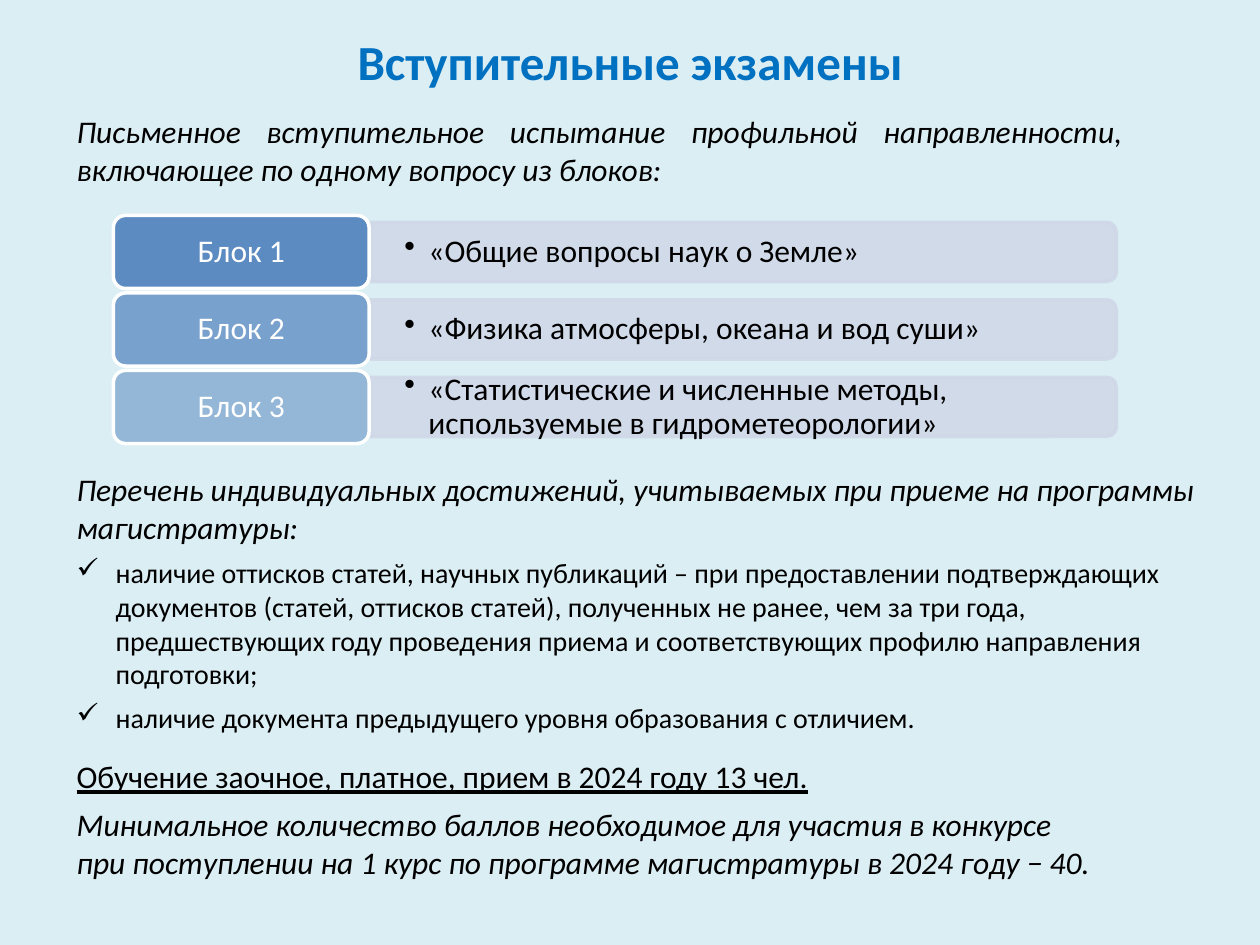
import lxml.etree
import pptx
import pptx.dml.color
import pptx.enum.shapes
import pptx.enum.text
import pptx.oxml.ns
import pptx.util

Inches, Pt = pptx.util.Inches, pptx.util.Pt
Align = pptx.enum.text.PP_ALIGN
Anchor = pptx.enum.text.MSO_ANCHOR
Preset = pptx.enum.shapes.MSO_SHAPE
qn = pptx.oxml.ns.qn

COLORS = {"background": "DBEEF4", "title": "0070C0", "text": "000000",
          "white": "FFFFFF", "bar": "D0D8E8", "block": "4F81BD"}
FONT = "Calibri"

TITLE = "Вступительные экзамены"
BLOCKS = [  # label, topic, opacity of the label in percent
    ("Блок 1", "«Общие вопросы наук о Земле»", 90),
    ("Блок 2", "«Физика атмосферы, океана и вод суши»", 70),
    ("Блок 3", "«Статистические и численные методы, используемые в гидрометеорологии»", 50),
]
ITALIC = {"size": Pt(18), "italic": True}
CHECK = {"bullet": "✓", "indent": 0.31}
EXAM = [
    ("Письменное вступительное испытание профильной направленности, "
     "включающее по одному вопросу из блоков:", ITALIC, {"alignment": Align.JUSTIFY}, {}),
]
ACHIEVEMENTS = [
    ("Перечень индивидуальных достижений, учитываемых при приеме на программы магистратуры:",
     ITALIC, {"space_after": Pt(6)}, {}),
    ("наличие оттисков статей, научных публикаций – при предоставлении подтверждающих "
     "документов (статей, оттисков статей), полученных не ранее, чем за три года, "
     "предшествующих году проведения приема и соответствующих профилю направления подготовки;",
     {"size": Pt(16)}, {"space_after": Pt(6)}, CHECK),
    ("наличие документа предыдущего уровня образования с отличием.",
     {"size": Pt(16)}, {}, CHECK),
]
ADMISSION = [
    ("Обучение заочное, платное, прием в 2024 году 13 чел.",
     {"size": Pt(18), "underline": True}, {"space_after": Pt(6)}, {}),
    ("Минимальное количество баллов необходимое для участия в конкурсе", ITALIC, {}, {}),
    ("при поступлении на 1 курс по программе магистратуры в 2024 году − 40.", ITALIC, {}, {}),
]
PASSAGES = [((0.51, 0.84, 8.5, 0.71), EXAM),
            ((0.51, 3.68, 9.28, 2.22), ACHIEVEMENTS),
            ((0.51, 5.96, 8.98, 1.09), ADMISSION)]

BLOCK_TOP, BLOCK_STEP = 1.71, 0.615
LABEL_LEFT, LABEL_WIDTH, LABEL_HEIGHT, LABEL_PAD = 0.9, 2.03, 0.58, 0.03
BAR_LEFT, BAR_LENGTH, BAR_HEIGHT = 2.94, 5.92, 0.47
TOPIC_HEIGHT = 0.42


def rgb(name):
    return pptx.dml.color.RGBColor.from_string(COLORS[name])


def set_all(target, values):
    for name, value in values.items():
        setattr(target, name, value)


def write_paragraph(paragraph, text, font, layout, bullet=None, indent=0, color="text"):
    run = paragraph.add_run()
    run.text = text
    set_all(run.font, {"name": FONT, **font})
    run.font.color.rgb = rgb(color)
    set_all(paragraph, layout)
    if bullet:
        properties = paragraph._p.get_or_add_pPr()
        properties.set("marL", str(Inches(indent)))
        properties.set("indent", str(-Inches(indent)))
        lxml.etree.SubElement(properties, qn("a:buChar")).set("char", bullet)


def add_text(shapes, box, paragraphs, frame_format, color="text"):
    frame = shapes.add_textbox(*map(Inches, box)).text_frame
    set_all(frame, {"word_wrap": True, **frame_format})
    for index, (text, font, layout, marker) in enumerate(paragraphs):
        paragraph = frame.add_paragraph() if index else frame.paragraphs[0]
        write_paragraph(paragraph, text, font, layout, color=color, **marker)


def set_opacity(fill, percent):
    color = fill._xPr.find(qn("a:solidFill"))[0]
    lxml.etree.SubElement(color, qn("a:alpha")).set("val", str(percent * 1000))


def add_panel(shapes, preset, box, fill, line, opacity):
    panel = shapes.add_shape(preset, *map(Inches, box))
    panel.shadow.inherit = False
    panel.fill.solid()
    panel.fill.fore_color.rgb = rgb(fill)
    set_opacity(panel.fill, opacity)
    panel.line.color.rgb = rgb(line)
    panel.line.width = Pt(2)
    return panel


def insets(horizontal, vertical):
    return {"margin_left": Inches(horizontal), "margin_right": Inches(horizontal),
            "margin_top": Inches(vertical), "margin_bottom": Inches(vertical),
            "vertical_anchor": Anchor.MIDDLE}


def add_block(shapes, top, label, topic, opacity):
    middle = top + LABEL_HEIGHT / 2
    # The bar stands upright before its quarter turn, so its rounded top faces right.
    bar_box = (BAR_LEFT + (BAR_LENGTH - BAR_HEIGHT) / 2, middle - BAR_LENGTH / 2,
               BAR_HEIGHT, BAR_LENGTH)
    bar = add_panel(shapes, Preset.ROUND_2_SAME_RECTANGLE, bar_box, "bar", "bar", 90)
    bar.rotation = 90
    set_opacity(bar.line.fill, 90)
    add_text(shapes, (BAR_LEFT, middle - TOPIC_HEIGHT / 2, 5.9, TOPIC_HEIGHT),
             [(topic, {"size": Pt(18)}, {"level": 1, "line_spacing": 0.9},
               {"bullet": "•", "indent": 0.19})], insets(0.27, 0.14))
    add_panel(shapes, Preset.ROUNDED_RECTANGLE,
              (LABEL_LEFT, top, LABEL_WIDTH, LABEL_HEIGHT), "block", "white", opacity)
    add_text(shapes, (LABEL_LEFT + LABEL_PAD, top + LABEL_PAD,
                      LABEL_WIDTH - 2 * LABEL_PAD, LABEL_HEIGHT - 2 * LABEL_PAD),
             [(label, {"size": Pt(18)}, {"alignment": Align.CENTER, "line_spacing": 0.9}, {})],
             insets(0.07, 0.04), "white")


def main():
    deck = pptx.Presentation()
    deck.slide_width, deck.slide_height = Inches(10), Inches(7.5)
    slide = deck.slides.add_slide(deck.slide_layouts[5])
    slide.background.fill.solid()
    slide.background.fill.fore_color.rgb = rgb("background")

    title = slide.shapes.title
    set_all(title, {"left": Inches(0), "top": Inches(0.21),
                    "width": Inches(10), "height": Inches(0.55)})
    title.text_frame.vertical_anchor = Anchor.MIDDLE
    write_paragraph(title.text_frame.paragraphs[0], TITLE, {"size": Pt(28), "bold": True},
                    {"alignment": Align.CENTER}, color="title")

    blocks = slide.shapes.add_group_shape()
    for index, block in enumerate(BLOCKS):
        add_block(blocks.shapes, BLOCK_TOP + index * BLOCK_STEP, *block)
    for box, paragraphs in PASSAGES:
        add_text(slide.shapes, box, paragraphs,
                 {"auto_size": pptx.enum.text.MSO_AUTO_SIZE.SHAPE_TO_FIT_TEXT})
    deck.save("out.pptx")


if __name__ == "__main__":
    main()
